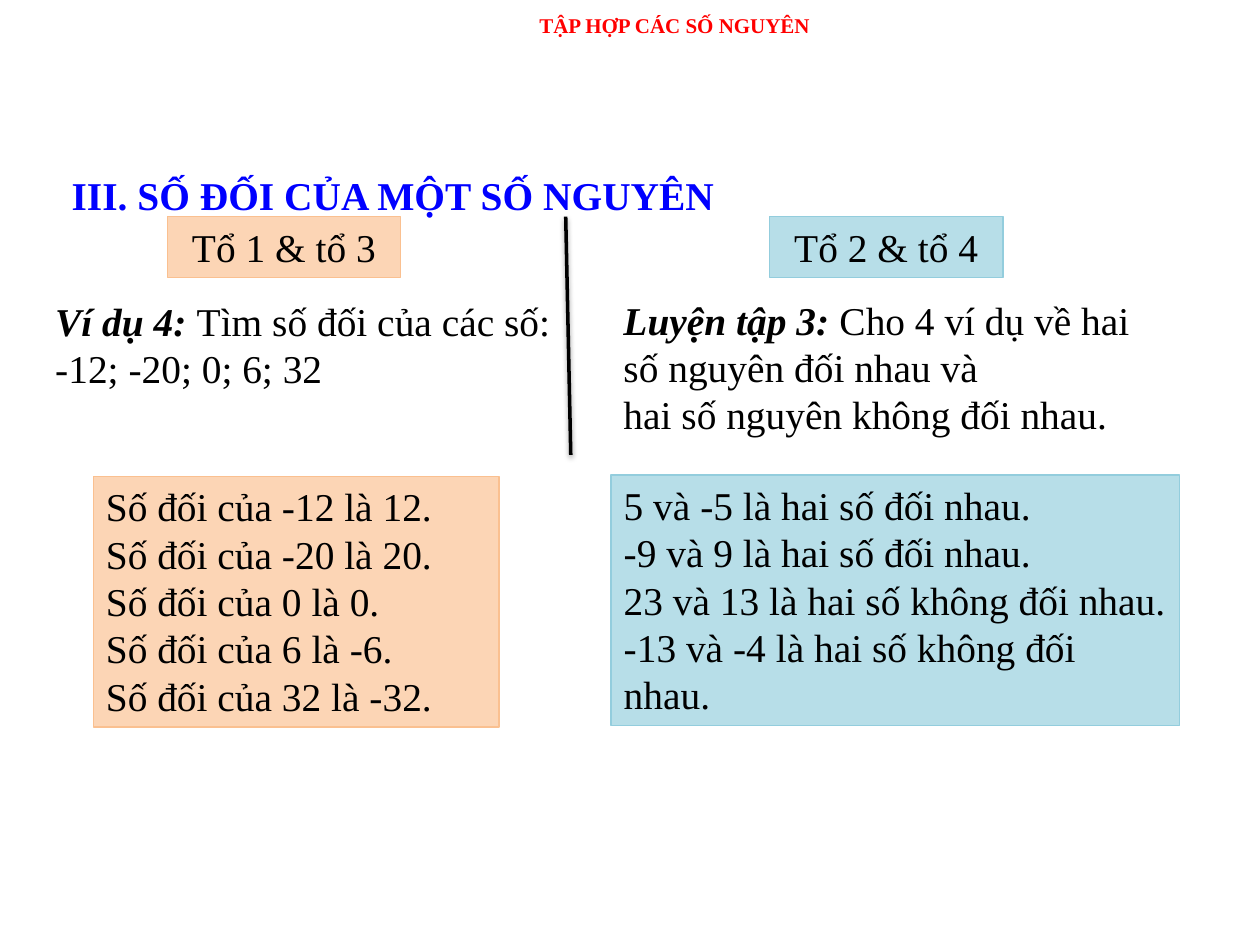
from pptx import Presentation
from pptx.dml.color import RGBColor
from pptx.enum.shapes import MSO_CONNECTOR as Connector
from pptx.enum.text import MSO_ANCHOR as Anchor, MSO_AUTO_SIZE as AutoSize, PP_ALIGN as Align
from pptx.oxml import parse_xml
from pptx.oxml.ns import nsdecls
from pptx.util import Inches, Pt

COLUMNS, ROWS = 20, 15
PEACH = ("FCD5B5", "FAC090")
AQUA = ("B7DEE8", "93CDDD")


def color(value):
    return RGBColor.from_string(value)


class LessonSlide:
    """Holds the text style and the slide being filled, on a 20 x 15 grid."""

    font, size, ink = "Times New Roman", 22.5, "000000"

    def __init__(self, deck, layout):
        self.column = deck.slide_width / COLUMNS
        self.row = deck.slide_height / ROWS
        self.slide = deck.slides.add_slide(deck.slide_layouts[layout])
        self.holders = self.slide.placeholders

    def box(self, left, top, width, height):
        return (int(left * self.column), int(top * self.row),
                int(width * self.column), int(height * self.row))

    def set_lines(self, shape, lines, align=Align.LEFT, size=None, ink=None, bold=False, wrap=True):
        frame = shape.text_frame
        frame.text = "\n".join(lines)
        frame.word_wrap = wrap
        frame.auto_size = AutoSize.NONE
        frame.vertical_anchor = Anchor.TOP
        for paragraph in frame.paragraphs:
            paragraph.alignment = align
            paragraph.space_before = Pt(0)
            for run in paragraph.runs:
                self.style(run, size, ink, bold)

    def style(self, run, size=None, ink=None, bold=False, italic=False):
        run.font.name = self.font
        run.font.size = Pt(size or self.size)
        run.font.color.rgb = color(ink or self.ink)
        run.font.bold = bold
        run.font.italic = italic

    def placeholder(self, index, place, lines, **style):
        holder = self.holders[index]
        holder.left, holder.top, holder.width, holder.height = self.box(*place)
        self.set_lines(holder, lines, **style)
        return holder

    def panel(self, index, place, lines, colors, **style):
        holder = self.placeholder(index, place, lines, **style)
        fill, border = colors
        holder.fill.solid()
        holder.fill.fore_color.rgb = color(fill)
        holder.line.color.rgb = color(border)
        holder.line.width = Pt(0.75)
        # Plain lines: no bullet and no hanging indent
        for paragraph in holder.text_frame.paragraphs:
            properties = paragraph._p.get_or_add_pPr()
            properties.set("marL", "0")
            properties.set("indent", "0")
            properties.append(parse_xml(f"<a:buNone {nsdecls('a')}/>"))

    def text(self, place, lines, lead="", **style):
        box = self.slide.shapes.add_textbox(*self.box(*place))
        self.set_lines(box, lines, **style)
        if lead:
            first = box.text_frame.paragraphs[0]
            task = first.text
            first.text = lead
            self.style(first.runs[0], bold=True, italic=True)
            rest = first.add_run()
            rest.text = task
            self.style(rest)

    def divider(self, start, end, width):
        line = self.slide.shapes.add_connector(
            Connector.STRAIGHT, *self.box(*start, *end))
        line.line.color.rgb = color(self.ink)
        line.line.width = Pt(width)
        line._element.spPr.append(parse_xml(
            f'<a:effectLst {nsdecls("a")}>'
            f'<a:outerShdw blurRad="{Pt(3.1)}" dist="{Pt(1.6)}" dir="5400000" rotWithShape="0">'
            f'<a:srgbClr val="{self.ink}"><a:alpha val="38000"/></a:srgbClr>'
            '</a:outerShdw></a:effectLst>'))


def main():
    deck = Presentation()
    deck.slide_width, deck.slide_height = Inches(10), Inches(7.5)
    lesson = LessonSlide(deck, layout=4)  # Comparison layout

    # Lesson title and section heading
    lesson.placeholder(0, (4.46, 0.1, 12.5, 1), ["TẬP HỢP CÁC SỐ NGUYÊN"],
                       align=Align.CENTER, size=12, ink="FF0000", bold=True, wrap=False)
    lesson.text((0.94, 2.62, 11.44, 0.96), ["III. SỐ ĐỐI CỦA MỘT SỐ NGUYÊN"],
                ink="0000FF", bold=True)

    # Group labels
    lesson.panel(1, (2.66, 3.44, 3.7, 0.96), ["Tổ 1 & tổ 3"], PEACH, align=Align.CENTER)
    lesson.panel(3, (12.22, 3.44, 3.7, 0.96), ["Tổ 2 & tổ 4"], AQUA, align=Align.CENTER)

    # Tasks on either side of the divider
    lesson.text((0.68, 4.62, 8.28, 1.72),
                ["Tìm số đối của các số: -12; -20; 0; 6; 32"], lead="Ví dụ 4: ")
    lesson.text((9.7, 4.6, 8.74, 2.48),
                ["Cho 4 ví dụ về hai số nguyên đối nhau và", "hai số nguyên không đối nhau."],
                lead="Luyện tập 3: ")
    lesson.divider((8.98, 3.44), (9.06, 7.22), width=2)

    # Answers
    opposites = {"-12": "12", "-20": "20", "0": "0", "6": "-6", "32": "-32"}
    lesson.panel(2, (1.48, 7.56, 6.44, 3.98),
                 [f"Số đối của {number} là {opposite}."
                  for number, opposite in opposites.items()], PEACH)
    lesson.panel(4, (9.7, 7.54, 9.02, 3.98),
                 ["5 và -5 là hai số đối nhau.", "-9 và 9 là hai số đối nhau.",
                  "23 và 13 là hai số không đối nhau.",
                  "-13 và -4 là hai số không đối nhau."], AQUA)

    deck.save("out.pptx")


if __name__ == "__main__":
    main()
